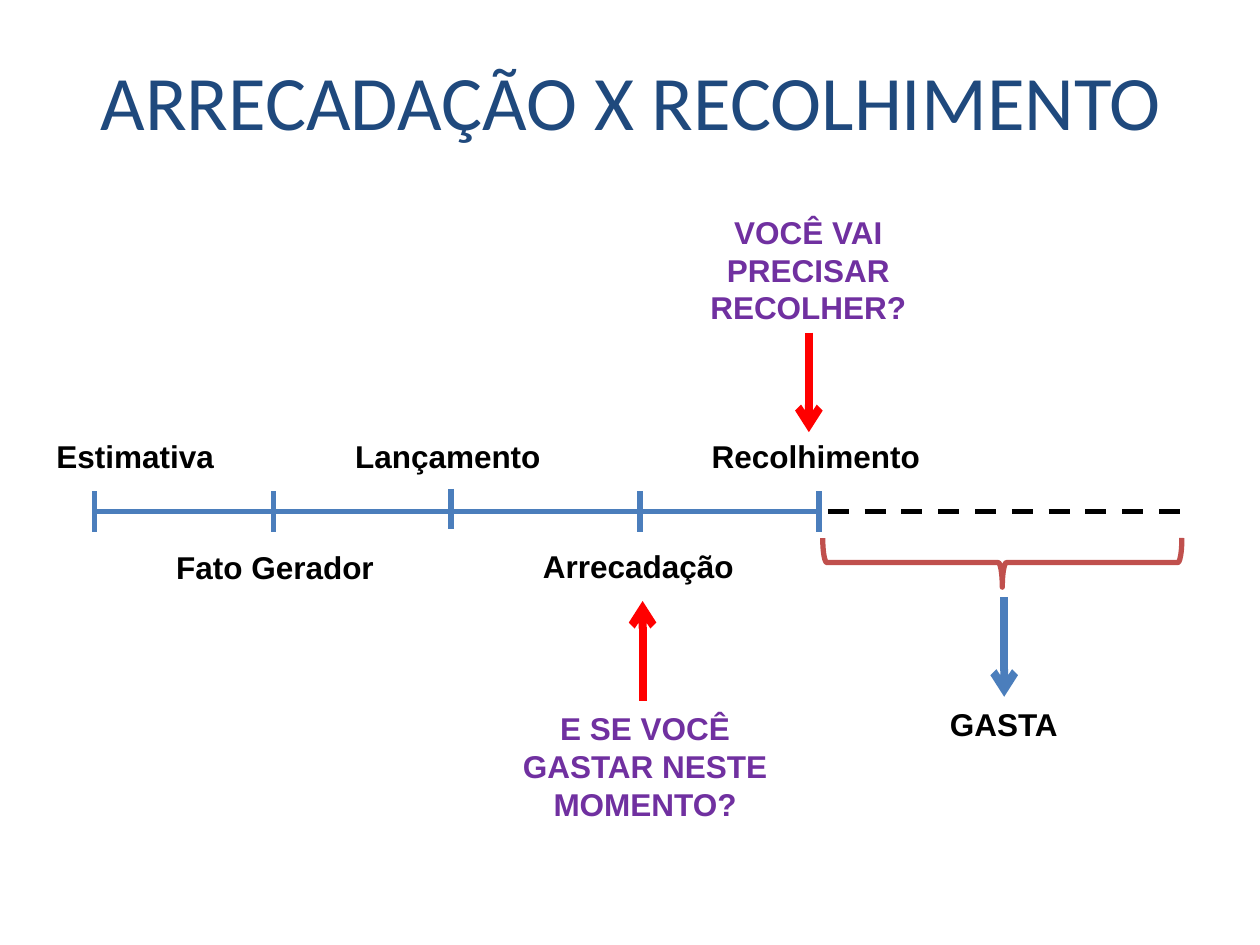
from lxml import etree
from pptx import Presentation
from pptx import util as u
from pptx.dml.color import RGBColor
from pptx.enum import dml, shapes, text
from pptx.oxml import ns

BLUE, RED, BLACK, PURPLE = "4B7EBC", "FF0000", "000000", "7030A0"
NAVY, BRICK = "1F497D", "C0504D"


def color(value):
    return RGBColor.from_string(value)


def inches(*values):
    return [u.Inches(value) for value in values]


class TimelineSlide:
    font = "Arial"
    title_font = "Calibri"
    label_size = 18
    title_size = 44

    def __init__(self, presentation):
        self.slide = presentation.slides.add_slide(presentation.slide_layouts[5])

    def add_words(self, paragraph, words, font, size, hex_color, bold):
        run = paragraph.add_run()
        run.text = words
        run.font.name = font
        run.font.size = u.Pt(size)
        run.font.bold = bold
        run.font.color.rgb = color(hex_color)

    def title(self, words, left, top, width, height):
        shape = self.slide.shapes.title
        shape.left, shape.top, shape.width, shape.height = inches(left, top, width, height)
        frame = shape.text_frame
        frame.vertical_anchor = text.MSO_ANCHOR.MIDDLE
        paragraph = frame.paragraphs[0]
        paragraph.alignment = text.PP_ALIGN.CENTER
        self.add_words(paragraph, words, self.title_font, self.title_size, NAVY, False)

    def label(self, words, left, top, width, height=0.4, hex_color=BLACK,
              alignment=text.PP_ALIGN.LEFT):
        shape = self.slide.shapes.add_textbox(*inches(left, top, width, height))
        frame = shape.text_frame
        frame.word_wrap = True
        frame.auto_size = text.MSO_AUTO_SIZE.SHAPE_TO_FIT_TEXT
        paragraph = frame.paragraphs[0]
        paragraph.alignment = alignment
        self.add_words(paragraph, words, self.font, self.label_size, hex_color, True)

    def question(self, words, left, top, width):
        self.label(words, left, top, width, 1.01, PURPLE, text.PP_ALIGN.CENTER)

    def line(self, x1, y1, x2, y2, hex_color=BLUE, weight=3):
        connector = self.slide.shapes.add_connector(
            shapes.MSO_CONNECTOR.STRAIGHT, *inches(x1, y1, x2, y2))
        connector.line.color.rgb = color(hex_color)
        connector.line.width = u.Pt(weight)
        etree.SubElement(connector._element.spPr, ns.qn("a:effectLst"))
        return connector

    def dashed_line(self, x1, y1, x2, y2):
        self.line(x1, y1, x2, y2, BLACK).line.dash_style = dml.MSO_LINE.DASH

    def arrow(self, x, start, end, hex_color):
        connector = self.line(x, start, x, end, hex_color, 4.5)
        etree.SubElement(connector.get_or_add_ln(), ns.qn("a:tailEnd"), type="arrow")

    def brace(self, left, top, width, height):
        shape = self.slide.shapes.add_shape(
            shapes.MSO_SHAPE.LEFT_BRACE, *inches(left, top, width, height))
        shape.rotation = 270
        shape.shadow.inherit = False
        shape.fill.background()
        shape.line.color.rgb = color(BRICK)
        shape.line.width = u.Pt(3)


def main():
    presentation = Presentation()
    presentation.slide_width, presentation.slide_height = inches(10, 7.5)
    timeline = TimelineSlide(presentation)
    timeline.title("ARRECADAÇÃO X RECOLHIMENTO", 0.51, 0.28, 9, 1.02)

    axis_y = 4.06
    stages = [
        ("Estimativa", 0.75, 3.9, 0.35, 3.42, 1.5),
        ("Fato Gerador", 2.17, 3.9, 1.3, 4.3, 1.81),
        ("Lançamento", 3.58, 3.88, 2.72, 3.42, 1.81),
        ("Arrecadação", 5.08, 3.9, 4.21, 4.29, 1.81),
        ("Recolhimento", 6.5, 3.9, 5.55, 3.42, 1.89),
    ]
    timeline.line(stages[0][1], axis_y, stages[-1][1], axis_y)
    for name, tick_x, tick_top, left, top, width in stages:
        timeline.line(tick_x, tick_top, tick_x, tick_top + 0.32)
        timeline.label(name, left, top, width)

    timeline.dashed_line(6.57, axis_y, 9.41, axis_y)
    timeline.brace(7.76, 3.04, 0.39, 2.85)
    timeline.arrow(7.97, 4.74, 5.53, BLUE)
    timeline.label("GASTA", 7.44, 5.55, 1.18)

    timeline.arrow(5.1, 5.56, 4.77, RED)
    timeline.question("E SE VOCÊ GASTAR NESTE MOMENTO?", 3.9, 5.58, 2.44)
    timeline.arrow(6.42, 2.64, 3.43, RED)
    timeline.question("VOCÊ VAI PRECISAR RECOLHER?", 5.39, 1.64, 2.05)

    presentation.save("out.pptx")


if __name__ == "__main__":
    main()
